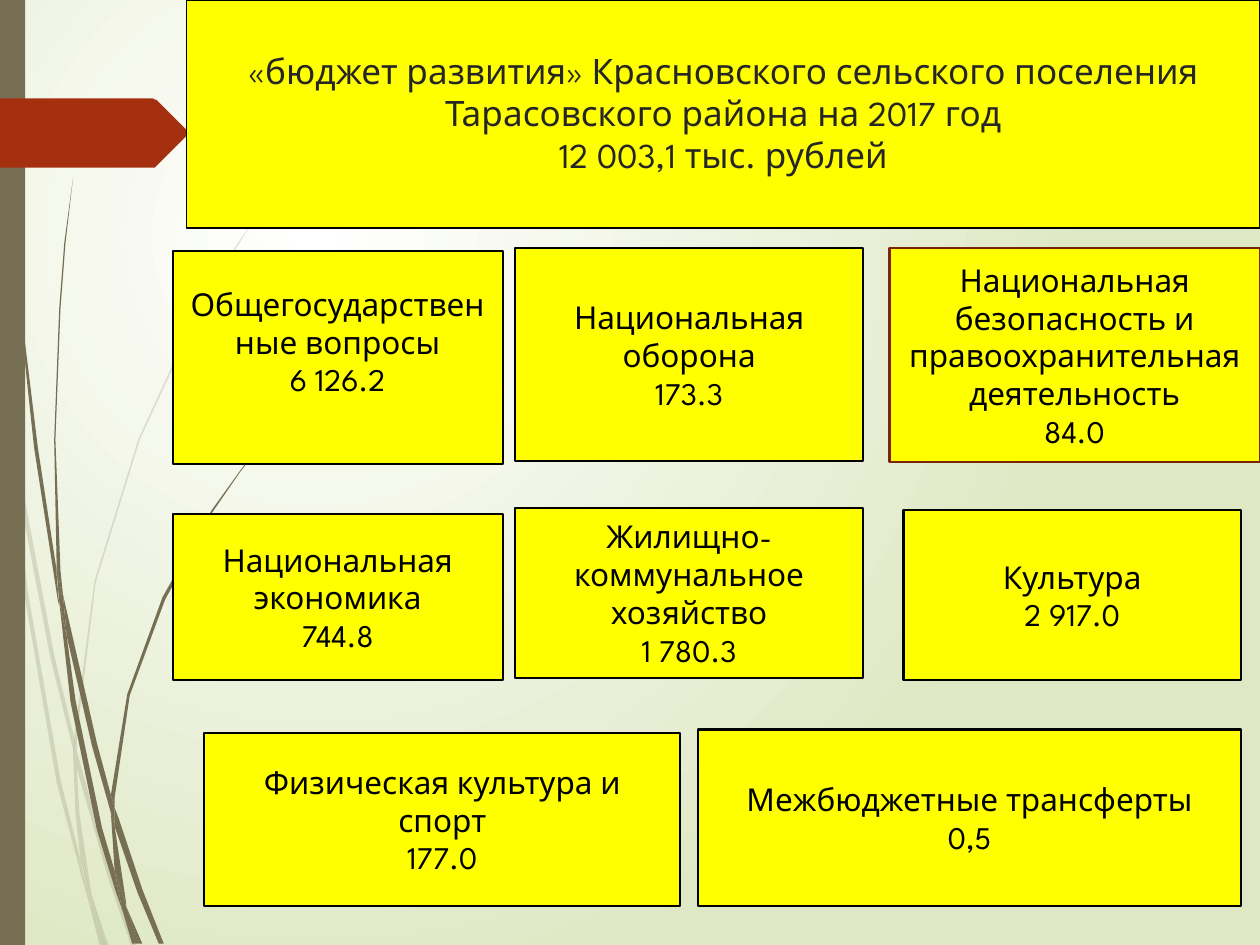
from dataclasses import dataclass
from typing import Any, Optional

from lxml.etree import SubElement
from pptx import Presentation
from pptx.dml.color import RGBColor as Rgb
from pptx.enum.shapes import MSO_SHAPE as Preset
from pptx.enum.text import MSO_ANCHOR as Anchor, PP_ALIGN as Align
from pptx.oxml.ns import qn
from pptx.util import Pt

PX = 9144  # one px is a hundredth of an inch
WIDTH, HEIGHT = 1000, 750
FONT = "League Spartan"
COLORS = {
    "center": "FFFFFF", "edge": "DFE8C4", "stem": "766F54", "arrow": "A53010",
    "box": "FFFF00", "black": "000000", "brown": "7A240C", "title": "262626",
}

Points = list[tuple[int, int]]


@dataclass
class Box:
    left: int
    top: int
    width: int
    height: int
    lines: list[str]
    line_color: str = "black"
    line_width: float = 1.25
    text_color: str = "black"
    size: int = 18
    anchor: Any = Anchor.MIDDLE
    margin_top: int = 5
    margin_bottom: int = 5


PALE_STEMS: list[Points] = [
    [(8, 350), (6, 322), (0, 282), (0, 299), (7, 344)],
    [(40, 522), (59, 599), (59, 586), (43, 520), (10, 345), (12, 376)],
    [(64, 607), (61, 596), (61, 610), (85, 694), (104, 750), (108, 750), (88, 692)],
    [(83, 750), (86, 750), (73, 711)],
    [(64, 683), (48, 619), (22, 469), (12, 376), (8, 350), (19, 470), (45, 621),
     (64, 693), (70, 714), (69, 707)],
    [(58, 599), (60, 646), (64, 683), (67, 692), (73, 711), (72, 706), (63, 646),
     (61, 610), (61, 608)],
    [(61, 584), (76, 462), (111, 349), (159, 245), (187, 198), (201, 175), (217, 154),
     (217, 153), (201, 175), (186, 197), (158, 244), (110, 348), (75, 461), (59, 584),
     (59, 586), (61, 596)],
    [(70, 714), (79, 750), (82, 750)],
    [(61, 608), (61, 610), (61, 596), (59, 586), (58, 599)],
    [(67, 692), (65, 683), (69, 707), (70, 714), (82, 750), (83, 750), (73, 711)],
]

DARK_STEMS: list[Points] = [
    [(5, 110), (14, 233), (27, 355), (46, 477), (47, 481), (45, 457), (45, 453),
     (30, 355), (15, 232), (6, 109), (4, 48), (3, 0), (2, 0), (3, 48)],
    [(73, 592), (88, 645), (88, 633), (88, 631), (77, 590), (50, 472), (53, 505)],
    [(94, 649), (91, 641), (91, 656), (109, 708), (126, 749), (130, 749), (113, 706)],
    [(91, 691), (81, 657), (60, 556), (53, 505), (47, 477), (56, 557), (77, 659),
     (92, 708), (97, 722), (96, 717)],
    [(50, 472), (48, 453), (44, 349), (48, 245), (52, 193), (58, 141), (51, 193),
     (47, 245), (43, 349), (45, 449), (49, 472)],
    [(110, 749), (113, 749), (100, 719)],
    [(47, 477), (53, 505), (50, 472), (49, 472), (45, 449), (45, 453)],
    [(91, 633), (103, 552), (131, 476), (169, 406), (191, 374), (203, 359), (216, 344),
     (215, 344), (203, 358), (191, 373), (168, 405), (129, 474), (101, 551), (88, 631),
     (91, 641)],
    [(97, 722), (105, 749), (108, 749)],
    [(88, 645), (91, 691), (96, 706), (100, 719), (100, 716), (91, 656), (90, 651)],
    [(88, 645), (90, 651), (91, 656), (91, 641), (88, 631), (88, 633)],
    [(96, 706), (91, 691), (96, 717), (97, 722), (108, 749), (110, 749), (100, 719)],
]

ARROW: Points = [
    (149, 107), (124, 132), (123, 133), (121, 133), (0, 133), (0, 78), (121, 78),
    (123, 79), (124, 79), (149, 104), (150, 106),
]

BOXES = [
    Box(148, 0, 852, 181,
        ["«бюджет развития» Красновского сельского поселения "
         "Тарасовского района на 2017 год", "12 003,1 тыс. рублей"],
        line_width=0.75, text_color="title", size=20, anchor=Anchor.TOP, margin_top=39),
    Box(137, 199, 262, 169, ["Общегосударственные вопросы", "6 126.2"], margin_bottom=30),
    Box(409, 197, 276, 169, ["Национальная оборона", "173.3"]),
    Box(706, 197, 294, 170,
        ["Национальная безопасность и правоохранительная деятельность", "84.0"],
        line_color="brown"),
    Box(137, 408, 262, 132, ["Национальная экономика", "744.8"]),
    Box(409, 403, 276, 135, ["Жилищно-коммунальное хозяйство", "1 780.3"]),
    Box(717, 405, 268, 135, ["Культура", "2 917.0"]),
    Box(162, 582, 378, 137, ["Физическая культура и спорт", "177.0"]),
    Box(554, 579, 431, 140, ["Межбюджетные трансферты", "0,5"]),
]


def color(name: str) -> Rgb:
    return Rgb.from_string(COLORS[name])


def set_attributes(target: Any, values: dict[str, Any]) -> None:
    for name, value in values.items():
        setattr(target, name, value)


def paint(shape: Any, fill: str, alpha: Optional[int] = None) -> None:
    """Give a flat fill without outline or shadow; alpha is opacity in percent."""
    shape.shadow.inherit = False
    shape.fill.solid()
    shape.fill.fore_color.rgb = color(fill)
    shape.line.fill.background()
    if alpha is not None:
        solid = shape.element.spPr.find(qn("a:solidFill"))
        SubElement(solid[0], qn("a:alpha"), val=str(alpha * 1000))


def paint_background(slide: Any) -> None:
    """Radial gradient centred on the upper left quarter."""
    fill = slide.background.fill
    fill.gradient()
    for stop, name in zip(fill.gradient_stops, ("center", "edge")):
        stop.color.rgb = color(name)
    gradient = slide.element.find(".//" + qn("a:gradFill"))
    gradient.remove(gradient.find(qn("a:lin")))
    circle = SubElement(gradient, qn("a:path"))
    circle.set("path", "circle")
    SubElement(circle, qn("a:fillToRect"), l="50000", t="50000", r="100000", b="100000")


def draw_outline(slide: Any, points: Points, fill: str, alpha: Optional[int] = None) -> None:
    builder = slide.shapes.build_freeform(*points[0], scale=float(PX))
    builder.add_line_segments(points[1:], close=True)
    paint(builder.convert_to_shape(), fill, alpha)


def draw_rectangle(slide: Any, left: int, top: int, width: int, height: int, fill: str) -> Any:
    lengths = (length * PX for length in (left, top, width, height))
    shape = slide.shapes.add_shape(Preset.RECTANGLE, *lengths)
    paint(shape, fill)
    return shape


def draw_box(slide: Any, box: Box) -> None:
    shape = draw_rectangle(slide, box.left, box.top, box.width, box.height, "box")
    shape.line.color.rgb = color(box.line_color)
    shape.line.width = Pt(box.line_width)
    frame = shape.text_frame
    set_attributes(frame, {
        "word_wrap": True,
        "vertical_anchor": box.anchor,
        "margin_top": box.margin_top * PX,
        "margin_bottom": box.margin_bottom * PX,
    })
    frame.text = "\n".join(box.lines)
    for paragraph in frame.paragraphs:
        paragraph.alignment = Align.CENTER
        set_attributes(paragraph.runs[0].font, {"name": FONT, "size": Pt(box.size)})
        paragraph.runs[0].font.color.rgb = color(box.text_color)


def main() -> None:
    presentation = Presentation()
    set_attributes(presentation, {"slide_width": WIDTH * PX, "slide_height": HEIGHT * PX})
    slide = presentation.slides.add_slide(presentation.slide_layouts[6])
    paint_background(slide)
    for points in PALE_STEMS:
        draw_outline(slide, points, "stem", alpha=20)
    for points in DARK_STEMS:
        draw_outline(slide, points, "stem")
    draw_rectangle(slide, 0, 0, 20, HEIGHT, "stem")
    draw_outline(slide, ARROW, "arrow")
    for box in BOXES:
        draw_box(slide, box)
    presentation.save("out.pptx")


if __name__ == "__main__":
    main()
